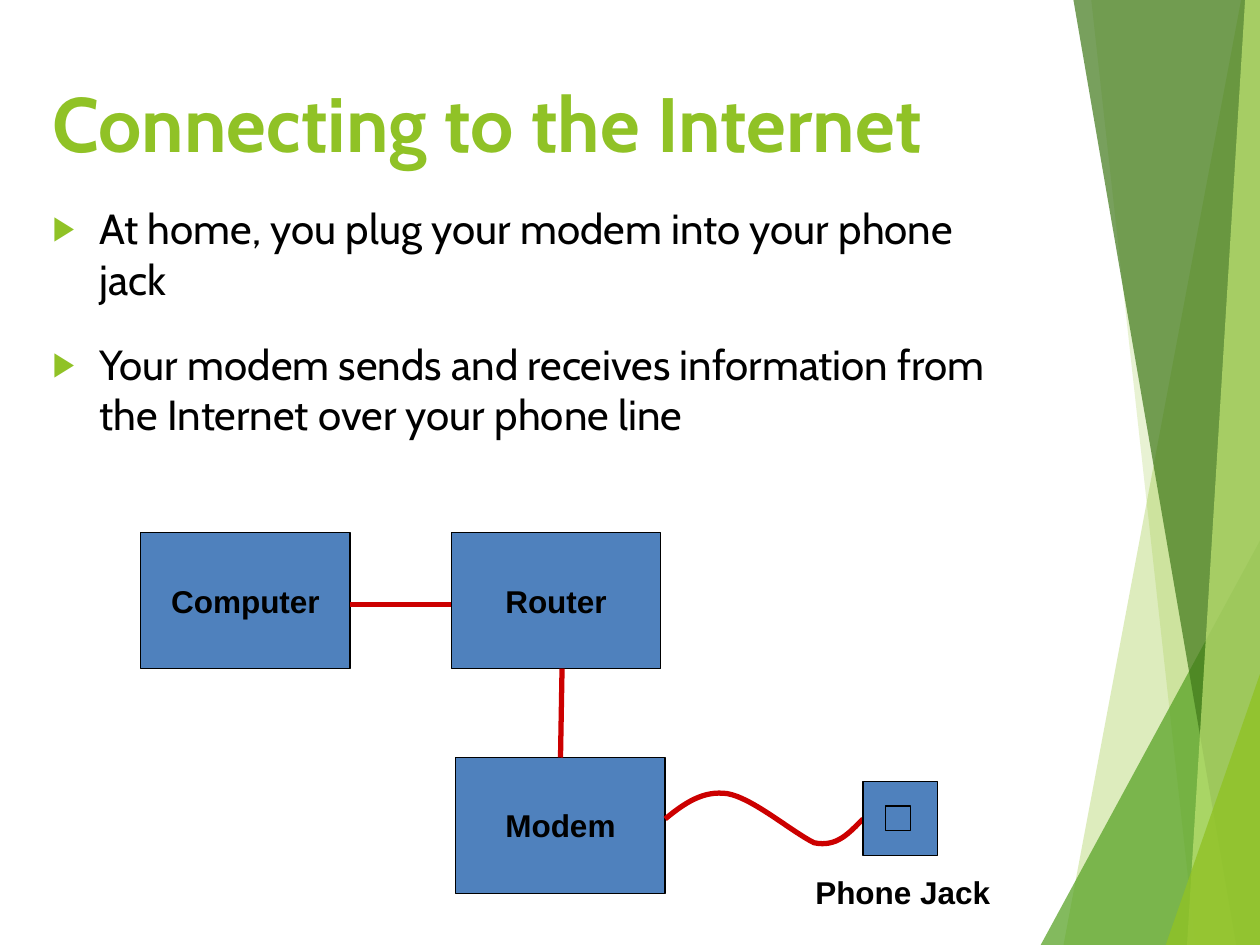
from dataclasses import dataclass

from lxml.etree import SubElement
from pptx import Presentation
from pptx.dml.color import RGBColor
from pptx.enum.shapes import MSO_CONNECTOR as CONN, MSO_SHAPE as SHAPE
from pptx.enum.text import MSO_ANCHOR as ANCHOR, PP_ALIGN as ALIGN
from pptx.oxml.ns import qn
from pptx.util import Cm, Pt

W, H = 25.4, 19.05


@dataclass(frozen=True)
class Theme:
    accent: str = "90C226"
    leaf: str = "54A021"
    forest: str = "3F7819"
    lime: str = "C0E474"
    box: str = "4F81BD"
    cable: str = "CC0000"
    ink: str = "000000"
    heading: str = "Cabin"
    label: str = "Arial"
    title_pt: int = 44
    body_pt: int = 24
    label_pt: int = 18
    outline_pt: float = 0.75
    cable_pt: float = 3


def rgb(code):
    return RGBColor.from_string(code)


def add_text(p, text, *, font, size, color, bold=False, align=ALIGN.LEFT):
    p.alignment = align
    r = p.add_run()
    r.text = text
    r.font.name, r.font.size, r.font.bold = font, Pt(size), bold
    r.font.color.rgb = rgb(color)


def add_bullet(p, color, indent):
    pPr = p._p.get_or_add_pPr()
    pPr.set("marL", str(Cm(indent)))
    pPr.set("indent", str(-Cm(indent)))
    clr = SubElement(pPr, qn("a:buClr"))
    SubElement(clr, qn("a:srgbClr"), val=color)
    SubElement(pPr, qn("a:buSzPct"), val="80000")
    SubElement(pPr, qn("a:buFont"), typeface="Arial")
    SubElement(pPr, qn("a:buChar"), char="▶")


def bezier(p0, p1, p2, p3, steps=16):
    """Points along a cubic curve, without its start."""
    for i in range(1, steps + 1):
        t = i / steps
        u = 1 - t
        yield tuple(u**3 * a + 3 * u * u * t * b + 3 * u * t * t * c + t**3 * d
                    for a, b, c, d in zip(p0, p1, p2, p3))


class Deck:
    def __init__(self, theme):
        self.theme = theme
        self.prs = Presentation()
        self.prs.slide_width, self.prs.slide_height = Cm(W), Cm(H)
        self.s = self.prs.slides.add_slide(self.prs.slide_layouts[6])

    def freeform(self, points, closed):
        (x, y), *rest = [(Cm(px), Cm(py)) for px, py in points]
        fb = self.s.shapes.build_freeform(x, y)
        fb.add_line_segments(rest, close=closed)
        sp = fb.convert_to_shape()
        sp.shadow.inherit = False
        return sp

    def facet(self, points, color, opacity):
        sp = self.freeform(points, True)
        sp.fill.solid()
        sp.fill.fore_color.rgb = rgb(color)
        clr = sp.fill._xPr.find(qn("a:solidFill"))[0]
        SubElement(clr, qn("a:alpha"), val=str(opacity * 1000))
        sp.line.fill.background()

    def text_box(self, x, y, w, h, anchor=ANCHOR.TOP, wrap=True):
        tf = self.s.shapes.add_textbox(Cm(x), Cm(y), Cm(w), Cm(h)).text_frame
        tf.word_wrap, tf.vertical_anchor = wrap, anchor
        return tf

    def title(self, text, *frame):
        t = self.theme
        tf = self.text_box(*frame, anchor=ANCHOR.MIDDLE)
        add_text(tf.paragraphs[0], text, font=t.heading, size=t.title_pt,
                 color=t.accent, bold=True)

    def bullets(self, items, *frame):
        t = self.theme
        tf = self.text_box(*frame)
        for i, item in enumerate(items):
            p = tf.add_paragraph() if i else tf.paragraphs[0]
            p.space_before = Pt(20)
            add_bullet(p, t.accent, 0.95)
            add_text(p, item, font=t.heading, size=t.body_pt, color=t.ink)

    def label(self, p, text):
        t = self.theme
        add_text(p, text, font=t.label, size=t.label_pt, color=t.ink,
                 bold=True, align=ALIGN.CENTER)

    def caption(self, text, *frame):
        self.label(self.text_box(*frame, wrap=False).paragraphs[0], text)

    def box(self, x, y, w, h, text=""):
        t = self.theme
        sp = self.s.shapes.add_shape(SHAPE.RECTANGLE, Cm(x), Cm(y), Cm(w), Cm(h))
        sp.shadow.inherit = False
        sp.fill.solid()
        sp.fill.fore_color.rgb = rgb(t.box)
        self.stroke(sp, t.ink, t.outline_pt)
        if text:
            tf = sp.text_frame
            tf.word_wrap, tf.vertical_anchor = False, ANCHOR.MIDDLE
            self.label(tf.paragraphs[0], text)

    def stroke(self, sp, color, width):
        sp.line.color.rgb = rgb(color)
        sp.line.width = Pt(width)

    def cable(self, x1, y1, x2, y2):
        c = self.s.shapes.add_connector(CONN.STRAIGHT, Cm(x1), Cm(y1), Cm(x2), Cm(y2))
        self.stroke(c, self.theme.cable, self.theme.cable_pt)
        SubElement(c._element.spPr, qn("a:effectLst"))

    def curved_cable(self, start, *curves):
        points = [start]
        for curve in curves:
            points += bezier(points[-1], *curve)
        sp = self.freeform(points, False)
        sp.fill.background()
        self.stroke(sp, self.theme.cable, self.theme.cable_pt)


def main():
    t = Theme()
    d = Deck(t)

    # Facets on the right: top and bottom of the slanted edge, colour, opacity
    for top, bottom, color, opacity in [
        ((25.02, 0), (21.44, H), t.accent, 30),
        ((22, 0), (24.1, H), t.accent, 20),
        ((W, 10.9), (20.98, H), t.leaf, 72),
        ((21.64, 0), (24.92, H), t.forest, 70),
        ((25.1, 0), (23.93, H), t.lime, 70),
        ((W, 13.59), (23.5, H), t.accent, 80),
    ]:
        d.facet([top, bottom, (W, H), (W, top[1])], color, opacity)

    # Title and bullets
    left, width = 0.81, 20.17
    d.title("Connecting to the Internet", left, 0.94, width, 3.02)
    d.bullets([
        "At home, you plug your modem into your phone jack",
        "Your modem sends and receives information from the Internet over your phone line",
    ], left, 3.96, width, 13.31)

    # Devices
    box_w, box_h = 4.22, 2.74
    row, computer_x, router_x = 10.74, 2.84, 9.1
    modem_x, modem_y = 9.19, 15.27
    d.box(computer_x, row, box_w, box_h, "Computer")
    d.box(modem_x, modem_y, box_w, box_h, "Modem")

    # Phone line and wall jack
    jack_x, line_y = 17.4, 16.51
    d.curved_cable(
        (modem_x + box_w, line_y),
        ((13.79, 16.2), (14.17, 15.93), (14.66, 16)),
        ((15.16, 16.08), (15.95, 16.76), (16.41, 16.99)),
        ((16.87, 17.09), (17.12, 16.79), (jack_x, line_y)),
    )
    d.box(jack_x, 15.75, 1.5, 1.5)
    d.box(17.85, 16.25, 0.5, 0.5)
    d.caption("Phone Jack", 16.18, 17.48, 4.04, 1.02)

    # Router and its cables
    d.box(router_x, row, box_w, box_h, "Router")
    d.cable(router_x, 12.19, computer_x + box_w, 12.19)
    d.cable(modem_x + box_w / 2, modem_y, 11.33, row + box_h)

    d.prs.save("out.pptx")


if __name__ == "__main__":
    main()
